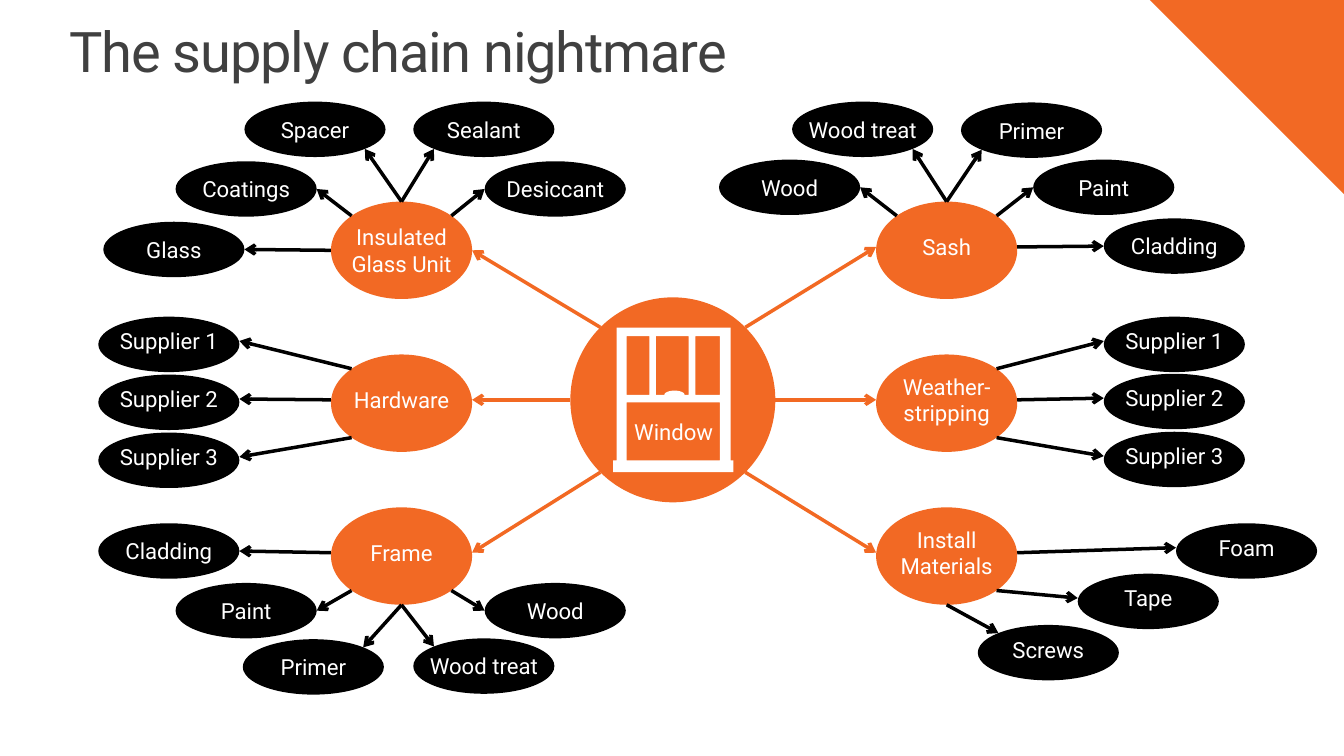
from math import cos, pi, sin, sqrt

from lxml.etree import SubElement
from pptx import Presentation
from pptx.dml.color import RGBColor
from pptx.enum.shapes import MSO_CONNECTOR, MSO_SHAPE
from pptx.enum.text import MSO_ANCHOR, MSO_AUTO_SIZE, PP_ALIGN
from pptx.oxml.ns import qn
from pptx.util import Inches, Pt

ORANGE, BLACK, WHITE, GREY = "F26924", "000000", "FFFFFF", "404040"
ARROW_ORANGE = "F26923"
FONT = "Roboto"
TITLE = "The supply chain nightmare"
LEFT, RIGHT = 4.78, 11.27
TOP, MIDDLE, BOTTOM = 2.98, 4.8, 6.62
CENTRE = (8.01, 4.76)
WINDOW_SIZE, HUB_SIZE, LEAF_SIZE = (2.44, 2.44), (1.68, 1.16), (1.68, 0.66)
LIFT = 0.04
D = sqrt(0.5)
SITES = {"N": (0, -1), "S": (0, 1), "W": (-1, 0), "E": (1, 0),
         "NW": (-D, -D), "NE": (D, -D), "SW": (-D, D), "SE": (D, D)}

# Each part: offset from the hub centre, hub site, part site.
GROUPS = [
    ("Insulated\vGlass Unit", LEFT, TOP, "NW", "E", 0, 0, [
        ("Glass", -2.71, -0.01, "W", "E"),
        ("Coatings", -1.85, -0.73, "NW", "E"),
        ("Spacer", -1.03, -1.44, "N", "SE"),
        ("Sealant", 0.98, -1.44, "N", "SW"),
        ("Desiccant", 1.83, -0.73, "NE", "W")]),
    ("Hardware", LEFT, MIDDLE, "W", "E", LIFT, LIFT, [
        ("Supplier 1", -2.77, -0.7, "NW", "E"),
        ("Supplier 2", -2.77, -0.01, "W", "E"),
        ("Supplier 3", -2.77, 0.68, "SW", "E")]),
    ("Frame", LEFT, BOTTOM, "SW", "E", LIFT, 0, [
        ("Cladding", -2.77, -0.06, "W", "E"),
        ("Paint", -1.85, 0.65, "SW", "E"),
        ("Primer", -1.05, 1.32, "S", "NE"),
        ("Wood treat", 0.98, 1.31, "S", "NW"),
        ("Wood", 1.83, 0.65, "SE", "W")]),
    ("Sash", RIGHT, TOP, "NE", "W", LIFT, 0, [
        ("Wood", -1.87, -0.75, "NW", "E"),
        ("Wood treat", -1, -1.44, "N", "SE"),
        ("Primer", 1.01, -1.43, "N", "SW"),
        ("Paint", 1.87, -0.75, "NE", "W"),
        ("Cladding", 2.71, -0.05, "E", "W")]),
    ("Weather-\vstripping", RIGHT, MIDDLE, "E", "W", LIFT, LIFT, [
        ("Supplier 1", 2.71, -0.7, "NE", "W"),
        ("Supplier 2", 2.71, -0.02, "E", "W"),
        ("Supplier 3", 2.71, 0.67, "SE", "W")]),
    ("Install\vMaterials", RIGHT, BOTTOM, "SE", "W", LIFT, LIFT, [
        ("Foam", 3.57, -0.06, "E", "W"),
        ("Tape", 2.4, 0.54, "SE", "W"),
        ("Screws", 1.21, 1.15, "S", "NW")]),
]

HANDLE = [(8.03 + 0.12 * cos(i * pi / 12), 4.7 - 0.05 * sin(i * pi / 12))
          for i in range(13)]
WINDOW_FRAME = [(7.34, 3.9), (7.34, 5.48), (7.3, 5.48), (7.3, 5.62),
                (8.73, 5.62), (8.73, 5.48), (8.7, 5.48), (8.7, 3.9)]
LOWER_PANE = [(7.46, 4.79), (8.57, 4.79), (8.57, 5.48), (7.46, 5.48)]
RIGHT_PANE = [(8.57, 4.7), (8.28, 4.7), (8.28, 4), (8.57, 4)]
MIDDLE_PANE = [(8.2, 4.7), *HANDLE, (7.81, 4.7), (7.81, 4), (8.2, 4)]
LEFT_PANE = [(7.73, 4.7), (7.46, 4.7), (7.46, 4), (7.73, 4)]


def rgb(color):
    return RGBColor.from_string(color)


def paint(sp, color):
    sp.shadow.inherit = False
    sp.fill.solid()
    sp.fill.fore_color.rgb = rgb(color)
    sp.line.fill.background()


def write(sp, text, size, color, frame, align=PP_ALIGN.CENTER):
    tf = sp.text_frame
    base = {"margin_left": 0, "margin_right": 0, "margin_top": 0,
            "margin_bottom": 0, "auto_size": MSO_AUTO_SIZE.NONE}
    for name, value in {**base, **frame}.items():
        setattr(tf, name, value)
    p = tf.paragraphs[0]
    p.text = text
    p.alignment = align
    for r in p.runs:
        for name, value in {"name": FONT, "size": Pt(size)}.items():
            setattr(r.font, name, value)
        r.font.color.rgb = rgb(color)
    return p


def ellipse(slide, centre, size, color, text="", lift=0):
    (x, y), (w, h) = centre, size
    sp = slide.shapes.add_shape(MSO_SHAPE.OVAL, Inches(x - w / 2),
                                Inches(y - h / 2), Inches(w), Inches(h))
    paint(sp, color)
    if text:
        write(sp, text, 19, WHITE,
              {"word_wrap": False, "vertical_anchor": MSO_ANCHOR.MIDDLE,
               "margin_bottom": Inches(2 * lift)})


def site(centre, size, side, lift=0):
    dx, dy = SITES[side]
    rise = 0 if dy else lift
    return (Inches(centre[0] + dx * size[0] / 2),
            Inches(centre[1] + dy * size[1] / 2 - rise))


def arrow(slide, start, end, color):
    cn = slide.shapes.add_connector(MSO_CONNECTOR.STRAIGHT, *start, *end)
    cn.line.color.rgb = rgb(color)
    cn.line.width = Pt(3)
    SubElement(cn.line._get_or_add_ln(), qn("a:tailEnd"), type="arrow")
    SubElement(cn._element.spPr, qn("a:effectLst"))


def draw_window(slide):
    ellipse(slide, CENTRE, WINDOW_SIZE, ORANGE)
    outlines = [[(Inches(x), Inches(y)) for x, y in points] for points in
                (WINDOW_FRAME, LOWER_PANE, RIGHT_PANE, MIDDLE_PANE, LEFT_PANE)]
    fb = slide.shapes.build_freeform(*outlines[0][0])
    for i, points in enumerate(outlines):
        if i:
            fb.move_to(*points[0])
        fb.add_line_segments(points[1:], close=True)
    paint(fb.convert_to_shape(), WHITE)
    tb = slide.shapes.add_textbox(Inches(7.18), Inches(4.92),
                                  Inches(1.68), Inches(0.44))
    write(tb, "Window", 19, WHITE,
          {"word_wrap": True, "vertical_anchor": MSO_ANCHOR.MIDDLE})


def draw_group(slide, name, x, y, out, into, lift, leaf_lift, leaves):
    hub = (x, y)
    ellipse(slide, hub, HUB_SIZE, ORANGE, name, lift)
    exit_side = {LEFT: "W", RIGHT: "E"}[x] if y == MIDDLE else out
    arrow(slide, site(CENTRE, WINDOW_SIZE, exit_side),
          site(hub, HUB_SIZE, into, lift), ARROW_ORANGE)
    for text, dx, dy, start, end in leaves:
        leaf = (x + dx, y + dy)
        ellipse(slide, leaf, LEAF_SIZE, BLACK, text, leaf_lift)
        arrow(slide, site(hub, HUB_SIZE, start, lift),
              site(leaf, LEAF_SIZE, end, leaf_lift), BLACK)


def main():
    prs = Presentation()
    prs.slide_width, prs.slide_height = Inches(16), Inches(9)
    slide = prs.slides.add_slide(prs.slide_layouts[5])
    corner = slide.shapes.add_shape(MSO_SHAPE.RIGHT_TRIANGLE, Inches(13.69), 0,
                                    Inches(2.31), Inches(2.31))
    corner.rotation = 180
    paint(corner, ORANGE)
    title = slide.shapes.title
    box = {"left": 0.83, "top": 0.02, "width": 9.58, "height": 0.99}
    for name, value in box.items():
        setattr(title, name, Inches(value))
    p = write(title, TITLE, 48, GREY,
              {"word_wrap": True, "vertical_anchor": MSO_ANCHOR.BOTTOM},
              PP_ALIGN.LEFT)
    p.line_spacing = 0.9
    p.runs[0].font._element.set("spc", "-100")
    draw_window(slide)
    for group in GROUPS:
        draw_group(slide, *group)
    prs.save("out.pptx")


if __name__ == "__main__":
    main()
